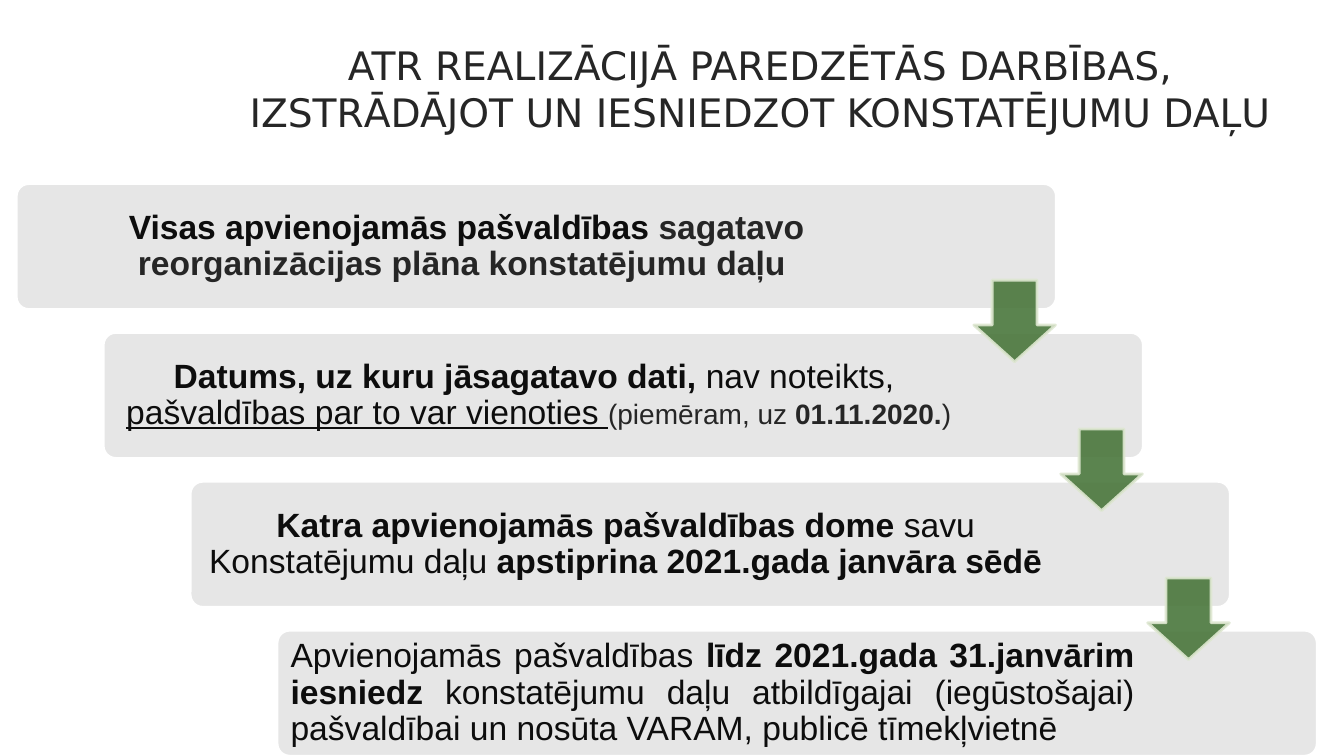
import pptx
import pptx.util
import pptx.dml.color
import pptx.enum.shapes
import pptx.enum.text
import pptx.oxml.ns
from lxml import etree

Pt = pptx.util.Pt
SHAPES = pptx.enum.shapes.MSO_SHAPE
ANCHOR = pptx.enum.text.MSO_ANCHOR
ALIGN = pptx.enum.text.PP_ALIGN

COLORS = {
    "title": "262626",
    "text": "0D0D0D",
    "soft": "262626",
    "box": "E6E6E6",
    "box_line": "FFFFFF",
    "arrow": "4A773C",
    "arrow_line": "DEE7D1",
}

# Staircase of steps
STEP_LEFT, STEP_TOP = 11.6, 131.1
STEP_RIGHT, STEP_DOWN = 62.1, 106.35
STEP_WIDTH, STEP_HEIGHT = 743, 90
TEXT_INSET = 2.6
ARROW_LEFT, ARROW_TOP, ARROW_SIZE = 684, 94 - 25, 58.3

# Each step: text width, alignment, runs of (text, format)
BOLD = {"bold": True}
SOFT_BOLD = {"bold": True, "color": "soft"}
SMALL = {"size": 20, "color": "soft"}
STEPS = [
    (638, ALIGN.CENTER, [
        ("Visas apvienojamās pašvaldības ", BOLD),
        ("sagatavo reorganizācijas plāna konstatējumu daļu ", SOFT_BOLD),
    ]),
    (617, ALIGN.CENTER, [
        ("Datums, uz kuru jāsagatavo dati, ", BOLD),
        ("nav noteikts, \n", {}),
        ("pašvaldības par to var vienoties ", {"underline": True}),
        ("(piemēram, uz ", SMALL),
        ("01.11.2020.", SMALL | BOLD),
        (")", SMALL),
    ]),
    (617, ALIGN.CENTER, [
        ("Katra apvienojamās pašvaldības dome ", BOLD),
        ("savu Konstatējumu daļu ", {}),
        ("apstiprina 2021.gada janvāra sēdē", BOLD),
    ]),
    (617, ALIGN.JUSTIFY, [
        ("Apvienojamās pašvaldības ", {}),
        ("līdz 2021.gada 31.janvārim iesniedz ", BOLD),
        ("konstatējumu daļu atbildīgajai (iegūstošajai) pašvaldībai "
         "un nosūta VARAM, publicē tīmekļvietnē", {}),
    ]),
]


def rgb(name):
    return pptx.dml.color.RGBColor.from_string(COLORS[name])


def add_run(paragraph, text, font="Arial", size=24, color="text",
            bold=False, underline=False):
    run = paragraph.add_run()
    run.text = text.rstrip("\n")
    run.font.name = font
    run.font.size = Pt(size)
    run.font.bold = bold
    run.font.underline = underline
    run.font.color.rgb = rgb(color)
    if text.endswith("\n"):
        paragraph.add_line_break()


def add_text(slide, left, top, width, height, runs, align,
             anchor=ANCHOR.MIDDLE, margin=7.2, spacing=0.9):
    box = slide.shapes.add_textbox(Pt(left), Pt(top), Pt(width), Pt(height))
    frame = box.text_frame
    frame.word_wrap = True
    frame.vertical_anchor = anchor
    frame.margin_left = frame.margin_right = Pt(7.2)
    frame.margin_top = frame.margin_bottom = Pt(margin)
    paragraph = frame.paragraphs[0]
    paragraph.alignment = align
    paragraph.line_spacing = spacing
    for text, style in runs:
        add_run(paragraph, text, **style)


def add_shape(slide, kind, left, top, width, height, adjustments, fill, line):
    shape = slide.shapes.add_shape(kind, Pt(left), Pt(top), Pt(width), Pt(height))
    shape.shadow.inherit = False
    for index, value in enumerate(adjustments):
        shape.adjustments[index] = value
    shape.fill.solid()
    shape.fill.fore_color.rgb = rgb(fill)
    shape.line.color.rgb = rgb(line)
    shape.line.width = Pt(2)
    return shape


def set_opacity(shape, percent):
    """Apply the opacity to both the fill and the line."""
    qn = pptx.oxml.ns.qn
    for color in shape.element.spPr.iter(qn("a:srgbClr")):
        etree.SubElement(color, qn("a:alpha"), val=str(percent * 1000))


def add_step(slide, index, text_width, align, runs):
    left = STEP_LEFT + index * STEP_RIGHT
    top = STEP_TOP + index * STEP_DOWN
    add_shape(slide, SHAPES.ROUNDED_RECTANGLE, left, top, STEP_WIDTH,
              STEP_HEIGHT, [0.1], "box", "box_line")
    add_text(slide, left + TEXT_INSET, top + TEXT_INSET, text_width,
             STEP_HEIGHT - 2 * TEXT_INSET, runs, align)


def add_step_arrow(slide, index):
    arrow = add_shape(slide, SHAPES.DOWN_ARROW,
                      STEP_LEFT + ARROW_LEFT + index * STEP_RIGHT,
                      STEP_TOP + ARROW_TOP + index * STEP_DOWN,
                      ARROW_SIZE, ARROW_SIZE, [0.55, 0.45],
                      "arrow", "arrow_line")
    # python-pptx lists the arrow head first, then the shaft width
    arrow.adjustments[0], arrow.adjustments[1] = 0.55, 0.45
    set_opacity(arrow, 90)


def main():
    presentation = pptx.Presentation()
    presentation.slide_width, presentation.slide_height = Pt(960), Pt(540)
    slide = presentation.slides.add_slide(presentation.slide_layouts[6])

    # Title
    title = ("ATR REALIZĀCIJĀ PAREDZĒTĀS DARBĪBAS, "
             "IZSTRĀDĀJOT UN IESNIEDZOT KONSTATĒJUMU DAĻU")
    style = {"font": "DejaVu Sans", "size": 28, "color": "title"}
    add_text(slide, 146, 26, 793.5, 91.5, [(title, style)], ALIGN.CENTER,
             ANCHOR.TOP, margin=3.6, spacing=1.0)

    # Steps, then the arrows that lead from each one to the next
    for index, step in enumerate(STEPS):
        add_step(slide, index, *step)
    for index in range(len(STEPS) - 1):
        add_step_arrow(slide, index)

    presentation.save("out.pptx")


if __name__ == "__main__":
    main()
